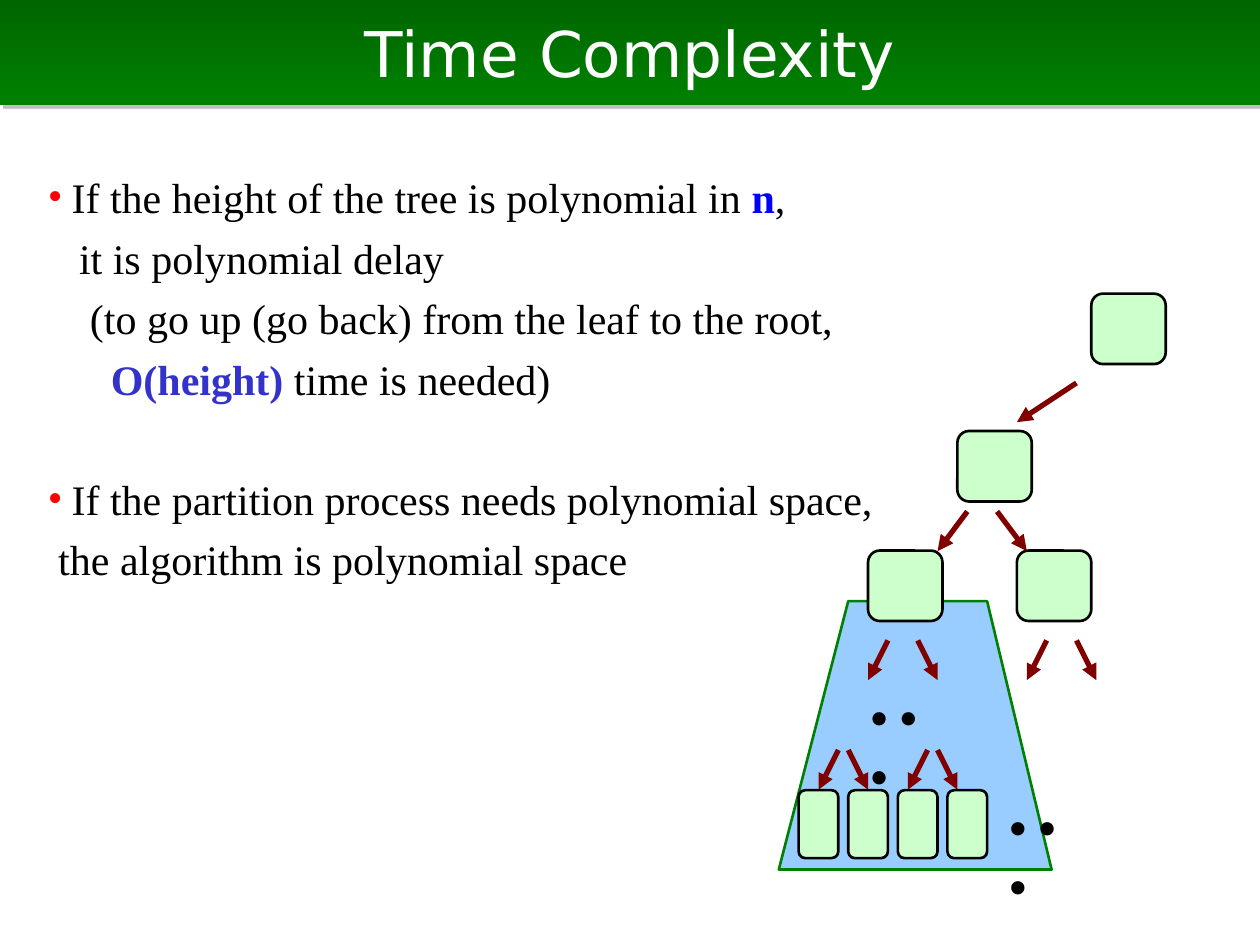
from lxml.etree import SubElement
from pptx import Presentation
from pptx.dml.color import RGBColor
from pptx.enum.shapes import MSO_CONNECTOR, MSO_SHAPE
from pptx.enum.text import MSO_ANCHOR, MSO_AUTO_SIZE, PP_ALIGN
from pptx.oxml.ns import qn
from pptx.util import Inches, Pt

COLORS = {
    "bar_top": "006600", "bar_bottom": "008000", "bar_shadow": "808080",
    "title": "FFFFFF", "text": "000000", "bullet": "FF0000",
    "variable": "0000FF", "bound": "3333CC", "node": "CCFFCC",
    "outline": "000000", "arrow": "800000",
    "subtree": "99CCFF", "subtree_edge": "008000",
}
COLUMNS, ROWS = 254, 190.5
SLIDE_WIDTH, SLIDE_HEIGHT = Inches(10), Inches(7.5)
SERIF = "Times New Roman"
INNER_NODE, LEAF = (15, 14.2), (8, 13.7)

LINES = [
    {"bullet": True, "indent": 4.8, "before": 5.9,
     "runs": [("If the height of the tree is polynomial in ", "text"),
              ("n", "variable"), (",", "text")]},
    {"indent": 6.3, "before": 5.9, "runs": [("it is polynomial delay", "text")]},
    {"indent": 8.5, "before": 5.9,
     "runs": [("(to go up (go back) from the leaf to the root,", "text")]},
    {"indent": 12.7, "before": 5.9,
     "runs": [("O(height)", "bound"), (" time is needed)", "text")]},
    {"bullet": True, "indent": 4.8, "before": 39.4,
     "runs": [("If the partition process needs polynomial space,", "text")]},
    {"indent": 2.1, "before": 5.9,
     "runs": [("the algorithm is polynomial space", "text")]},
]


def color(name):
    """Return the named colour."""
    return RGBColor.from_string(COLORS[name])


def across(columns):
    """Convert grid columns to a length."""
    return round(SLIDE_WIDTH * columns / COLUMNS)


def down(rows):
    """Convert grid rows to a length."""
    return round(SLIDE_HEIGHT * rows / ROWS)


def box(left, top, width, height):
    """Convert a grid rectangle to lengths."""
    return across(left), down(top), across(width), down(height)


def apply(target, values):
    """Set every attribute in a dict of format values."""
    for name, value in values.items():
        setattr(target, name, value)


def place(shape, *cells):
    """Move and size a shape on the grid."""
    apply(shape, dict(zip(("left", "top", "width", "height"), box(*cells))))


def write(paragraph, text, color_name, **values):
    """Add a formatted run to a paragraph."""
    run = paragraph.add_run()
    run.text = text
    apply(run.font, values)
    run.font.color.rgb = color(color_name)


def paint(shape, fill, edge):
    """Give a shape a plain fill and a thin outline."""
    shape.shadow.inherit = False
    shape.fill.solid()
    shape.fill.fore_color.rgb = color(fill)
    shape.line.color.rgb = color(edge)
    shape.line.width = Pt(1.5)


def add_heading(slide):
    """Turn the title into a gradient bar with a hard shadow."""
    heading = slide.shapes.title
    place(heading, 0, 0, COLUMNS, 21.1)
    heading.fill.gradient()
    heading.fill.gradient_angle = 270
    for stop, name in zip(heading.fill.gradient_stops, ("bar_top", "bar_bottom")):
        stop.color.rgb = color(name)
    effects = SubElement(heading._element.spPr, qn("a:effectLst"))
    shadow = SubElement(effects, qn("a:outerShdw"), dist=str(Pt(2.8)),
                        dir="2700000", algn="ctr", rotWithShape="0")
    tint = SubElement(shadow, qn("a:srgbClr"), val=COLORS["bar_shadow"])
    SubElement(tint, qn("a:alpha"), val="50000")
    apply(heading.text_frame, {"vertical_anchor": MSO_ANCHOR.MIDDLE,
                               "auto_size": MSO_AUTO_SIZE.NONE})
    paragraph = heading.text_frame.paragraphs[0]
    paragraph.alignment = PP_ALIGN.CENTER
    write(paragraph, "Time Complexity", "title", size=Pt(36), name="DejaVu Sans")


def set_bullet(paragraph, indent, bullet):
    """Indent a paragraph, with a red bullet hanging if wanted."""
    props = paragraph._p.get_or_add_pPr()
    props.set("marL", str(across(indent)))
    props.set("indent", str(-across(indent) if bullet else 0))
    if not bullet:
        SubElement(props, qn("a:buNone"))
        return
    tint = SubElement(props, qn("a:buClr"))
    SubElement(tint, qn("a:srgbClr"), val=COLORS["bullet"])
    SubElement(props, qn("a:buFont"), typeface=SERIF)
    SubElement(props, qn("a:buChar"), char="•")


def add_claims(slide):
    """Fill the body with the two claims."""
    claims = slide.placeholders[1]
    place(claims, 7.1, 33.3, 234, 87.9)
    frame = claims.text_frame
    apply(frame, {"auto_size": MSO_AUTO_SIZE.NONE, "vertical_anchor": MSO_ANCHOR.TOP})
    for number, line in enumerate(LINES):
        paragraph = frame.add_paragraph() if number else frame.paragraphs[0]
        paragraph.space_before = Pt(line["before"])
        set_bullet(paragraph, line["indent"], line.get("bullet", False))
        for text, name in line["runs"]:
            write(paragraph, text, name, size=Pt(24), name=SERIF, bold=name != "text")


def add_subtree(slide):
    """Draw the trapezoid behind one subtree."""
    corners = [(171, 121.2), (157, 175.3), (212, 175.3), (199, 121.2)]
    points = [(across(x), down(y)) for x, y in corners]
    builder = slide.shapes.build_freeform(*points[0])
    builder.add_line_segments(points[1:], close=True)
    paint(builder.convert_to_shape(), "subtree", "subtree_edge")


def add_node(slide, left, top, size):
    """Draw a rounded tree node."""
    node = slide.shapes.add_shape(MSO_SHAPE.ROUNDED_RECTANGLE, *box(left, top, *size))
    paint(node, "node", "outline")


def add_arrow(slide, start, top, end, bottom):
    """Draw an arrow from parent to child."""
    arrow = slide.shapes.add_connector(
        MSO_CONNECTOR.STRAIGHT, across(start), down(top), across(end), down(bottom))
    arrow.line.color.rgb = color("arrow")
    arrow.line.width = Pt(3)
    SubElement(arrow.line._get_or_add_ln(), qn("a:tailEnd"), type="triangle")
    SubElement(arrow._element.spPr, qn("a:effectLst"))


def add_fork(slide, center, top, inner, outer):
    """Draw a mirrored pair of arrows."""
    for side in (-1, 1):
        add_arrow(slide, center + side * inner, top, center + side * outer, top + 8)


def add_dots(slide, left, top):
    """Write the dots for omitted levels."""
    frame = slide.shapes.add_textbox(*box(left, top, 18.3, 12.7)).text_frame
    frame.word_wrap = True
    write(frame.paragraphs[0], "• • •", "text", size=Pt(28), name=SERIF, bold=True)


def main():
    """Build the slide."""
    deck = Presentation()
    apply(deck, {"slide_width": SLIDE_WIDTH, "slide_height": SLIDE_HEIGHT})
    slide = deck.slides.add_slide(deck.slide_layouts[1])
    add_heading(slide)
    add_claims(slide)
    add_subtree(slide)
    for left, top in ((220, 59.2), (193, 86.9), (205, 111), (175, 111)):
        add_node(slide, left, top, INNER_NODE)
    for column in range(4):
        add_node(slide, 161 + 10 * column, 159.3, LEAF)
    add_arrow(slide, 217, 77.2, 205, 85.1)
    for fork in ((198, 103.1, 3, 9), (214, 129.1, 3, 7), (182, 129.1, 3, 7),
                 (170, 151.2, 1, 5), (188, 151.2, 1, 5)):
        add_fork(slide, *fork)
    for left, top in ((201, 159.3), (173, 137.2)):
        add_dots(slide, left, top)
    deck.save("out.pptx")


if __name__ == "__main__":
    main()
